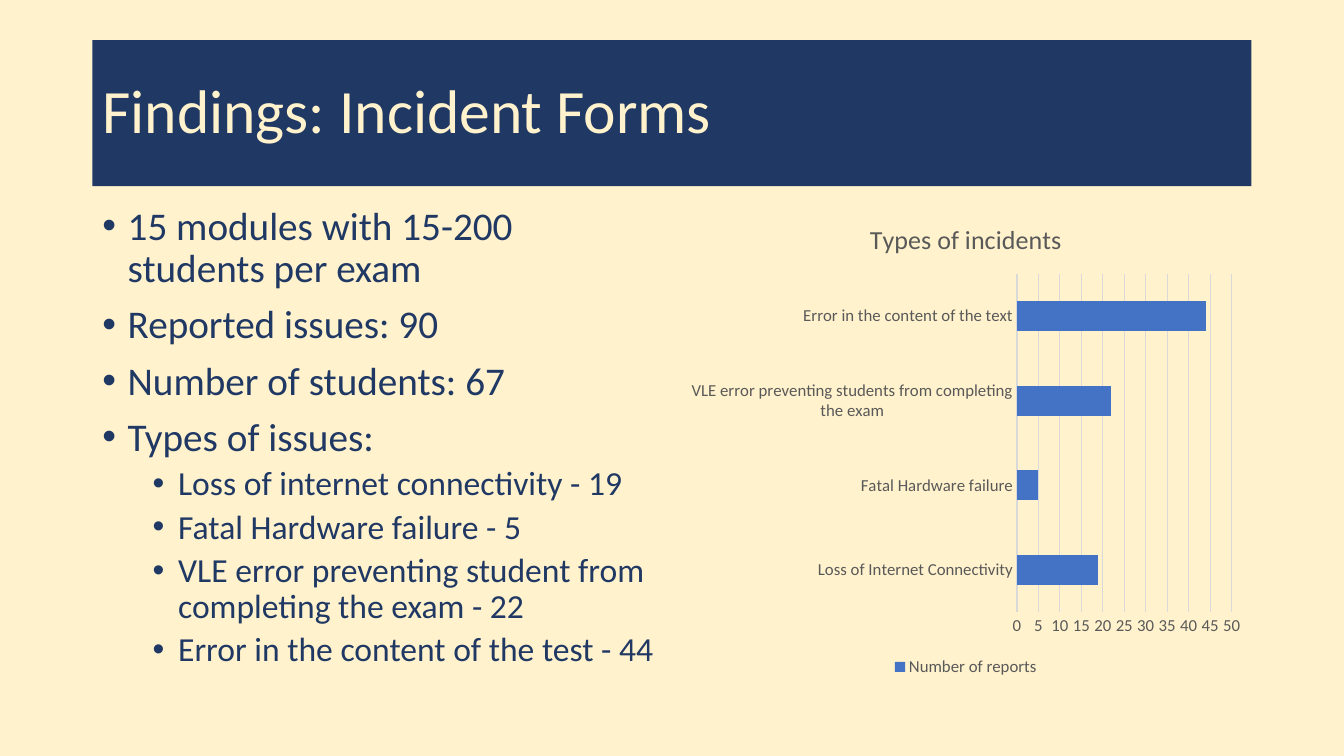
from dataclasses import dataclass

from lxml.etree import SubElement
from pptx import Presentation
from pptx.chart.data import CategoryChartData as ChartData
from pptx.dml.color import RGBColor as Rgb
from pptx.enum.chart import XL_CHART_TYPE as ChartType
from pptx.enum.chart import XL_LEGEND_POSITION as LegendPosition
from pptx.enum.chart import XL_TICK_MARK as TickMark
from pptx.enum.shapes import MSO_SHAPE as Preset
from pptx.enum.text import MSO_ANCHOR as Anchor
from pptx.enum.text import PP_ALIGN as Align
from pptx.oxml.ns import qn
from pptx.slide import Slide
from pptx.util import Cm, Pt

FONT = "Calibri"
COLORS = {
    "cream": "FFF2CC",
    "navy": "203864",
    "bar": "4472C4",
    "label": "595959",
    "grid": "D9D9D9",
}
LEFT, TOP = 2.33, 5.07
COLUMN_WIDTH, COLUMN_HEIGHT = 14.4, 12.09
GUTTER = 0.41
FULL_WIDTH = 2 * COLUMN_WIDTH + GUTTER


@dataclass(frozen=True)
class Level:
    size: int
    margin: float
    space_before: int


@dataclass(frozen=True)
class Bullet:
    text: str
    level: int = 0


@dataclass(frozen=True)
class Incident:
    name: str
    reports: int


LEVELS = [Level(28, 0.64, 10), Level(24, 1.91, 5)]
BULLETS = [
    Bullet("15 modules with 15-200 students per exam"),
    Bullet("Reported issues: 90"),
    Bullet("Number of students: 67"),
    Bullet("Types of issues:"),
    Bullet("Loss of internet connectivity - 19", 1),
    Bullet("Fatal Hardware failure - 5", 1),
    Bullet("VLE error preventing student from completing the exam - 22", 1),
    Bullet("Error in the content of the test - 44", 1),
]
INCIDENTS = [
    Incident("Loss of Internet Connectivity", 19),
    Incident("Fatal Hardware failure", 5),
    Incident("VLE error preventing students from completing the exam", 22),
    Incident("Error in the content of the text", 44),
]


def color(name: str) -> Rgb:
    return Rgb.from_string(COLORS[name])


def style_font(font, size: float, color_name: str) -> None:
    font.name = FONT
    font.size = Pt(size)
    font.bold = False
    font.color.rgb = color(color_name)


def add_span(para, text: str, size: float, color_name: str) -> None:
    span = para.add_run()
    span.text = text
    style_font(span.font, size, color_name)


def add_title(page: Slide, text: str) -> None:
    banner = page.shapes.add_shape(
        Preset.RECTANGLE, Cm(LEFT), Cm(1.01), Cm(FULL_WIDTH), Cm(3.68)
    )
    banner.shadow.inherit = False
    banner.fill.solid()
    banner.fill.fore_color.rgb = color("navy")
    banner.line.fill.background()
    frame = banner.text_frame
    frame.word_wrap = True
    frame.vertical_anchor = Anchor.MIDDLE
    para = frame.paragraphs[0]
    para.alignment = Align.LEFT
    para.line_spacing = 0.9
    add_span(para, text, 44, "cream")


def add_bullets(page: Slide, bullets: list[Bullet]) -> None:
    box = page.shapes.add_textbox(
        Cm(LEFT), Cm(TOP), Cm(COLUMN_WIDTH), Cm(COLUMN_HEIGHT)
    )
    frame = box.text_frame
    frame.word_wrap = True
    for index, bullet in enumerate(bullets):
        para = frame.add_paragraph() if index else frame.paragraphs[0]
        level = LEVELS[bullet.level]
        para.level = bullet.level
        para.line_spacing = 0.9
        para.space_before = Pt(level.space_before)
        props = para._p.get_or_add_pPr()
        props.set("marL", str(Cm(level.margin)))
        props.set("indent", str(Cm(-0.64)))
        SubElement(props, qn("a:buFont"), typeface="Arial")
        SubElement(props, qn("a:buChar"), char="•")
        add_span(para, bullet.text, level.size, "navy")


def style_axis(axis) -> None:
    axis.major_tick_mark = TickMark.NONE
    axis.minor_tick_mark = TickMark.NONE
    style_font(axis.tick_labels.font, 12, "label")


def style_line(line) -> None:
    line.color.rgb = color("grid")
    line.width = Pt(0.75)


def add_incident_chart(page: Slide, incidents: list[Incident]) -> None:
    data = ChartData()
    data.categories = [incident.name for incident in incidents]
    data.add_series("Number of reports", [incident.reports for incident in incidents])
    chart = page.shapes.add_chart(
        ChartType.BAR_CLUSTERED,
        Cm(LEFT + COLUMN_WIDTH + GUTTER),
        Cm(TOP),
        Cm(COLUMN_WIDTH),
        Cm(COLUMN_HEIGHT),
        data,
    ).chart
    chart.font.name = FONT
    chart.font.size = Pt(10)
    chart.has_title = True
    add_span(
        chart.chart_title.text_frame.paragraphs[0], "Types of incidents", 18.6, "label"
    )
    chart.chart_title.include_in_layout = False

    plot = chart.plots[0]
    plot.gap_width = 182
    plot.vary_by_categories = False
    fill = plot.series[0].format.fill
    fill.solid()
    fill.fore_color.rgb = color("bar")

    style_axis(chart.category_axis)
    style_line(chart.category_axis.format.line)
    style_axis(chart.value_axis)
    chart.value_axis.format.line.fill.background()
    chart.value_axis.has_major_gridlines = True
    style_line(chart.value_axis.major_gridlines.format.line)

    chart.has_legend = True
    chart.legend.position = LegendPosition.BOTTOM
    chart.legend.include_in_layout = False
    style_font(chart.legend.font, 12, "label")


def main() -> None:
    deck = Presentation()
    deck.slide_width, deck.slide_height = Cm(33.87), Cm(19.05)
    page = deck.slides.add_slide(deck.slide_layouts[6])
    page.background.fill.solid()
    page.background.fill.fore_color.rgb = color("cream")
    add_title(page, "Findings: Incident Forms")
    add_bullets(page, BULLETS)
    add_incident_chart(page, INCIDENTS)
    deck.save("out.pptx")


if __name__ == "__main__":
    main()
